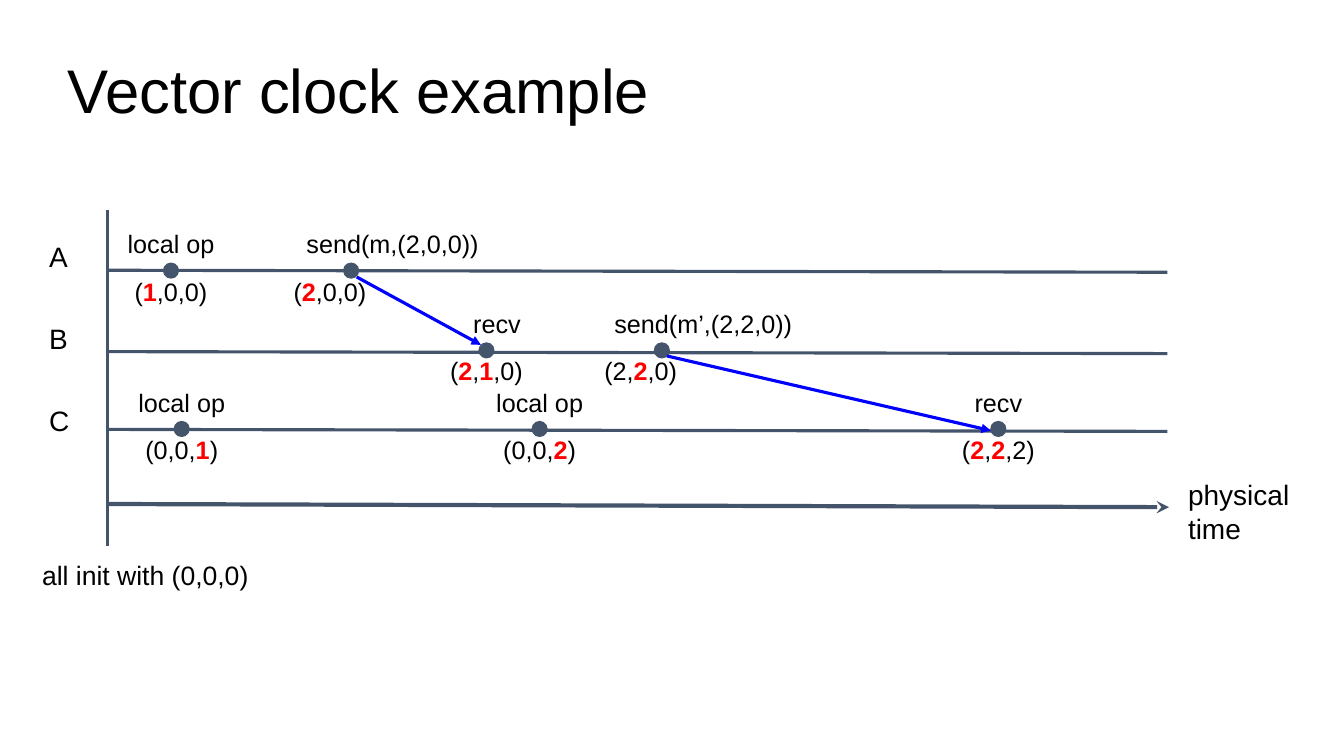
from lxml import etree
from pptx import Presentation
from pptx.dml.color import RGBColor
from pptx.enum.shapes import MSO_CONNECTOR, MSO_SHAPE
from pptx.enum.text import MSO_ANCHOR, MSO_AUTO_SIZE, PP_ALIGN
from pptx.oxml.ns import qn
from pptx.util import Cm, Pt

SLATE = RGBColor(0x44, 0x54, 0x6A)
BLUE = RGBColor(0x00, 0x00, 0xFF)
RED = RGBColor(0xFF, 0x00, 0x00)
BLACK = RGBColor(0x00, 0x00, 0x00)

AXIS_LEFT, AXIS_RIGHT = 2.71, 29.42
DOT_SIZE = 0.38
PROCESSES = [("A", 6.81), ("B", 8.86), ("C", 10.82)]
EVENT_ROWS = {"A": 6.82, "B": 8.83, "C": 10.81}
EVENTS = [
    ("A", 4.31, "local op", "(*1*,0,0)"),
    ("A", 8.85, "send(m,(2,0,0))", "(*2*,0,0)"),
    ("B", 12.26, "recv", "(*2*,*1*,0)"),
    ("B", 16.68, "send(m’,(2,2,0))", "(2,*2*,0)"),
    ("C", 4.58, "local op", "(0,0,*1*)"),
    ("C", 13.6, "local op", "(0,0,*2*)"),
    ("C", 25.16, "recv", "(*2*,*2*,2)"),
]
MESSAGES = [((8.99, 6.98), (12.12, 8.69)), ((16.81, 8.97), (24.97, 10.85))]


def set_attributes(target, values):
    for name, value in values.items():
        setattr(target, name, value)


def add_span(para, text, size, color=BLACK, bold=False):
    span = para.add_run()
    span.text = text
    set_attributes(span.font, {"name": "Arial", "size": Pt(size), "bold": bold})
    span.font.color.rgb = color


def add_box(page, left, top, width, height):
    box = page.shapes.add_textbox(Cm(left), Cm(top), Cm(width), Cm(height))
    margins = dict.fromkeys(
        ("margin_left", "margin_top", "margin_right", "margin_bottom"), Cm(0.25))
    set_attributes(box.text_frame, {"word_wrap": True, **margins})
    return box.text_frame


def add_caption(page, text, left, top, width, height, size=20):
    frame = add_box(page, left, top, width, height)
    add_span(frame.paragraphs[0], text, size)


def add_line(page, start, end, color=SLATE, width=2.25, arrow=None):
    line = page.shapes.add_connector(
        MSO_CONNECTOR.STRAIGHT, *[Cm(value) for value in (*start, *end)])
    line.line.color.rgb = color
    line.line.width = Pt(width)
    if arrow:
        etree.SubElement(line.line._get_or_add_ln(), qn("a:tailEnd"), type=arrow)
    etree.SubElement(line._element.spPr, qn("a:effectLst"))


def add_dot(page, x, y):
    dot = page.shapes.add_shape(
        MSO_SHAPE.OVAL, Cm(x - DOT_SIZE / 2), Cm(y - DOT_SIZE / 2),
        Cm(DOT_SIZE), Cm(DOT_SIZE))
    dot.shadow.inherit = False
    dot.fill.solid()
    dot.fill.fore_color.rgb = SLATE
    dot.line.color.rgb = SLATE
    dot.line.width = Pt(0.75)


def add_event_label(page, process, x, name, clock):
    sends = name.startswith("send")
    left, width = (x - 1.7, 5.49) if sends else (x - 1.72, 3.44)
    frame = add_box(page, left, EVENT_ROWS[process] - 1.16, width, 2.36)
    name_para, clock_para = frame.paragraphs[0], frame.add_paragraph()
    set_attributes(name_para, {"alignment": PP_ALIGN.CENTER, "line_spacing": 0.8})
    set_attributes(clock_para, {
        "alignment": PP_ALIGN.LEFT if sends else PP_ALIGN.CENTER,
        "line_spacing": 0.8, "space_before": Pt(16.5)})
    if (process, name) == ("B", "recv"):
        name_para._p.get_or_add_pPr().set("marL", str(Cm(0.53)))
    add_span(name_para, name, 18)
    for index, part in enumerate(clock.split("*")):
        changed = index % 2 == 1
        add_span(clock_para, part, 18, RED if changed else BLACK, changed)


def add_title(page, text):
    title = page.shapes.title
    set_attributes(title, {"left": Cm(1.7), "top": Cm(0.76),
                           "width": Cm(30.48), "height": Cm(3.18)})
    set_attributes(title.text_frame, {
        "auto_size": MSO_AUTO_SIZE.NONE, "vertical_anchor": MSO_ANCHOR.MIDDLE,
        "margin_left": 0, "margin_top": 0, "margin_right": 0, "margin_bottom": 0})
    para = title.text_frame.paragraphs[0]
    set_attributes(para, {"alignment": PP_ALIGN.LEFT, "line_spacing": 0.9})
    add_span(para, text, 44)


def main():
    deck = Presentation()
    set_attributes(deck, {"slide_width": Cm(33.87), "slide_height": Cm(19.05)})
    page = deck.slides.add_slide(deck.slide_layouts[5])
    add_title(page, "Vector clock example")
    for index, (process, y) in enumerate(PROCESSES):
        add_line(page, (AXIS_LEFT, y), (AXIS_RIGHT, y + 0.05))
        add_caption(page, process, 0.99, 5.79 + 2.07 * index, 1.45, 1.37)
    add_line(page, (AXIS_LEFT, 12.7), (29.46, 12.78), width=3, arrow="stealth")
    add_caption(page, "physical time", 29.69, 11.79, 3.2, 2.24)
    for process, x, name, clock in EVENTS:
        add_dot(page, x, EVENT_ROWS[process])
    for start, end in MESSAGES:
        add_line(page, start, end, BLUE, arrow="triangle")
    for event in EVENTS:
        add_event_label(page, *event)
    add_line(page, (AXIS_LEFT, 5.28), (AXIS_LEFT, 13.77))
    add_caption(page, "all init with (0,0,0)", 0.81, 13.84, 6.3, 1.32, size=19)
    deck.save("out.pptx")


if __name__ == "__main__":
    main()
